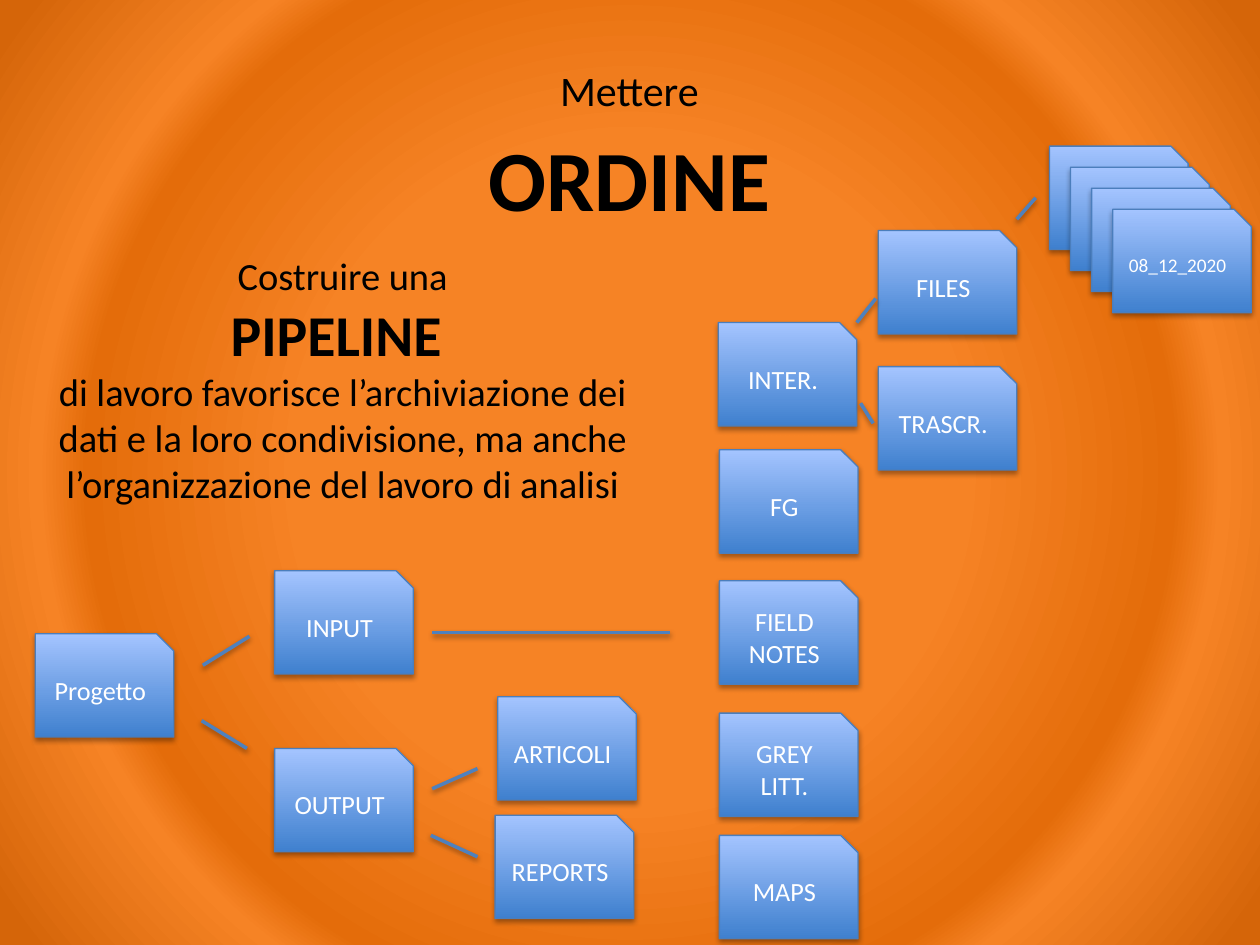
import pptx
import pptx.dml.color
import pptx.enum.shapes
import pptx.enum.text
import pptx.oxml
import pptx.oxml.ns
import pptx.util

Inches = pptx.util.Inches
Pt = pptx.util.Pt
RGB = pptx.dml.color.RGBColor.from_string
qn = pptx.oxml.ns.qn


class Theme:
    font = "Calibri"
    ink, card_ink = "000000", "FFFFFF"
    card_line, link = "4B7EBC", "4F81BD"
    card_stops = [(0, "3F80CE"), (100, "A4C4FF")]
    page_stops = [(42, "F68325"), (69, "E46C0A"), (75, "F68325"), (97, "D56509")]
    lead, headline = 24, 49
    body, keyword = 22, 33
    label, date = 15, 11
    card_border, link_width = 0.75, 2
    card_shadow = (35, 1.8)
    link_shadow = (38, 1.6)
    shadow_blur = 3.1


def replace_with_gradient(parent, stops, direction):
    """Swap the solid fill in parent for a gradient with the given direction XML."""
    stop_xml = "".join(
        f'<a:gs pos="{position * 1000}"><a:srgbClr val="{color}"/></a:gs>'
        for position, color in stops)
    gradient = pptx.oxml.parse_xml(
        f'<a:gradFill {pptx.oxml.ns.nsdecls("a")} rotWithShape="1">'
        f"<a:gsLst>{stop_xml}</a:gsLst>{direction}</a:gradFill>")
    parent.replace(parent.find(qn("a:solidFill")), gradient)


def add_shadow(shape, opacity, distance):
    shape._element.spPr.append(pptx.oxml.parse_xml(
        f'<a:effectLst {pptx.oxml.ns.nsdecls("a")}>'
        f'<a:outerShdw blurRad="{Pt(Theme.shadow_blur)}" dist="{Pt(distance)}"'
        ' dir="5400000" rotWithShape="0"><a:srgbClr val="000000">'
        f'<a:alpha val="{opacity * 1000}"/></a:srgbClr></a:outerShdw></a:effectLst>'))


class Board:
    card_width, card_height = 1.1, 0.82

    def __init__(self, deck, theme):
        self.theme = theme
        self.page = deck.slides.add_slide(deck.slide_layouts[6])

    def background(self):
        self.page.background.fill.solid()
        replace_with_gradient(
            self.page.element.find(".//" + qn("p:bgPr")), self.theme.page_stops,
            '<a:path path="circle">'
            '<a:fillToRect l="50000" t="50000" r="50000" b="50000"/></a:path>')

    def format_para(self, para, size, color, bold=False):
        para.alignment = pptx.enum.text.PP_ALIGN.CENTER
        for span in para.runs:
            span.font.name = self.theme.font
            span.font.size = Pt(size)
            span.font.bold = bold
            span.font.color.rgb = RGB(color)

    def text(self, left, top, width, height, lines, gap=0):
        """Add centred paragraphs, each given as (text, size, bold)."""
        box = self.page.shapes.add_textbox(
            Inches(left), Inches(top), Inches(width), Inches(height))
        frame = box.text_frame
        frame.word_wrap = True
        frame.vertical_anchor = pptx.enum.text.MSO_ANCHOR.MIDDLE
        frame.text = "\n".join(words for words, _, _ in lines)
        for para, (_, size, bold) in zip(frame.paragraphs, lines):
            self.format_para(para, size, self.theme.ink, bold)
            para.space_after = Pt(gap)

    def card(self, left, top, label="", size=None):
        card = self.page.shapes.add_shape(
            pptx.enum.shapes.MSO_SHAPE.SNIP_1_RECTANGLE, Inches(left), Inches(top),
            Inches(self.card_width), Inches(self.card_height))
        card.fill.solid()
        replace_with_gradient(card._element.spPr, self.theme.card_stops,
                              '<a:lin ang="16200000" scaled="0"/>')
        card.line.color.rgb = RGB(self.theme.card_line)
        card.line.width = Pt(self.theme.card_border)
        add_shadow(card, *self.theme.card_shadow)
        if label:
            frame = card.text_frame
            frame.word_wrap = True
            frame.vertical_anchor = pptx.enum.text.MSO_ANCHOR.MIDDLE
            frame.text = label
            self.format_para(frame.paragraphs[0], size or self.theme.label,
                             self.theme.card_ink)

    def link(self, *ends):
        link = self.page.shapes.add_connector(
            pptx.enum.shapes.MSO_CONNECTOR.STRAIGHT, *map(Inches, ends))
        link.line.color.rgb = RGB(self.theme.link)
        link.line.width = Pt(self.theme.link_width)
        add_shadow(link, *self.theme.link_shadow)


CARDS = [
    (0.28, 5.03, "Progetto"),
    (2.18, 4.53, "INPUT"), (2.18, 5.94, "OUTPUT"),
    (3.95, 5.53, "ARTICOLI"), (3.93, 6.47, "REPORTS"),
    (5.7, 2.56, "INTER."), (5.71, 3.57, "FG"), (5.71, 4.61, "FIELD NOTES"),
    (5.71, 5.66, "GREY LITT."), (5.71, 6.63, "MAPS"),
    (6.97, 1.83, "FILES"), (6.97, 2.91, "TRASCR."),
]
LINKS = [
    (3.43, 5.02, 5.32, 5.02),
    (1.6, 5.72, 1.96, 5.94), (1.61, 5.28, 1.98, 5.05),
    (3.43, 6.26, 3.79, 6.1), (3.42, 6.63, 3.79, 6.8),
    (6.8, 2.56, 6.95, 2.37), (6.83, 3.2, 6.93, 3.36),
    (8.07, 1.74, 8.22, 1.57),
]
STACK_SIZE, STACK_STEP = 4, 0.167


def main():
    deck = pptx.Presentation()
    deck.slide_width, deck.slide_height = Inches(10), Inches(7.5)
    theme = Theme()
    board = Board(deck, theme)
    board.background()
    board.text(0.7, -0.4, 8.59, 3.13, [
        ("Mettere", theme.lead, False),
        ("ORDINE", theme.headline, True)], gap=6)
    board.text(0.15, 0.55, 5.14, 4.92, [
        ("Costruire una", theme.body, False),
        ("PIPELINE ", theme.keyword, True),
        ("di lavoro favorisce l’archiviazione dei dati e la loro condivisione, "
         "ma anche l’organizzazione del lavoro di analisi", theme.body, False)])
    for card in CARDS:
        board.card(*card)
    for layer in range(STACK_SIZE):
        is_front = layer == STACK_SIZE - 1
        board.card(8.33 + layer * STACK_STEP, 1.16 + layer * STACK_STEP,
                   "08_12_2020" if is_front else "", theme.date)
    for ends in LINKS:
        board.link(*ends)
    deck.save("out.pptx")


if __name__ == "__main__":
    main()
